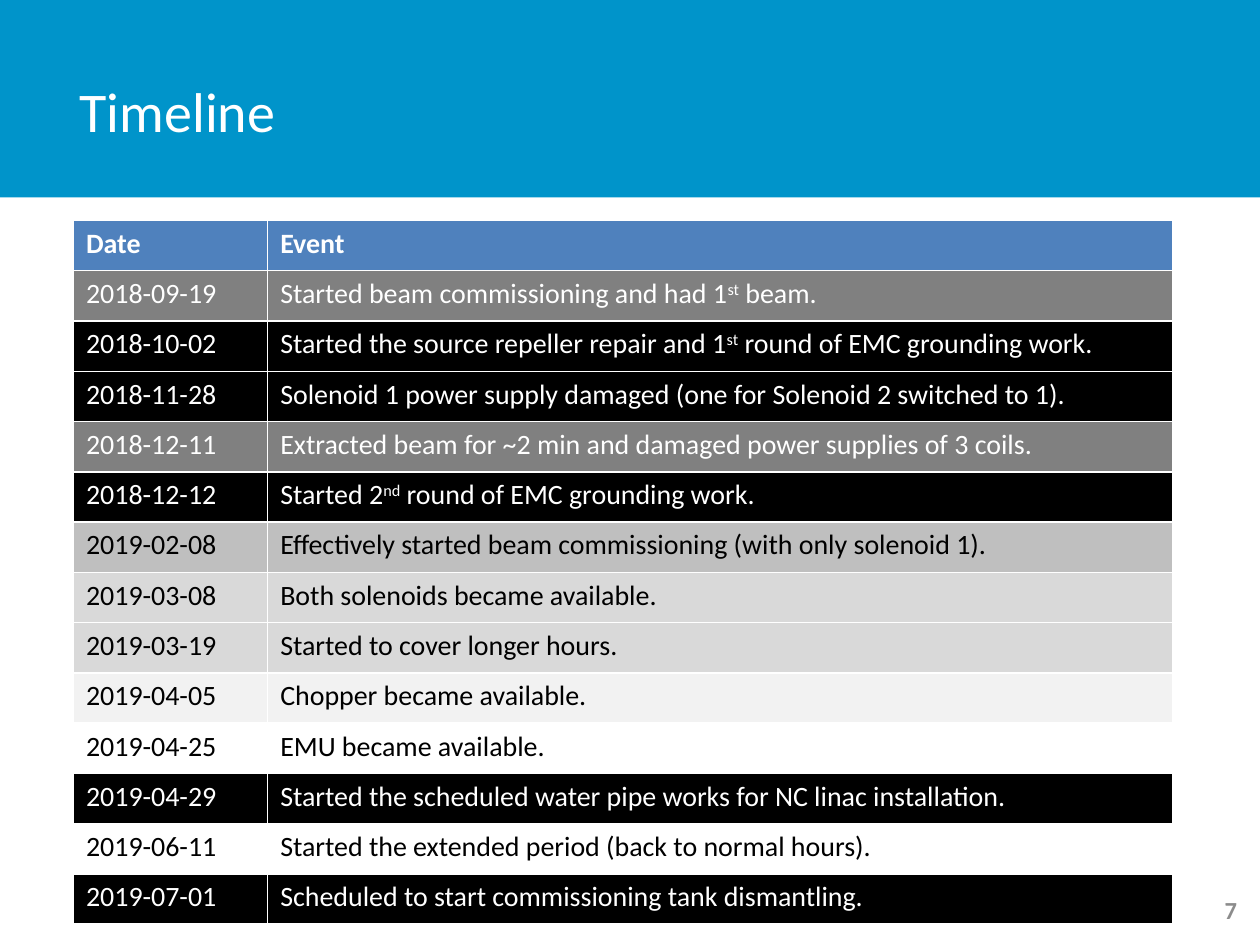
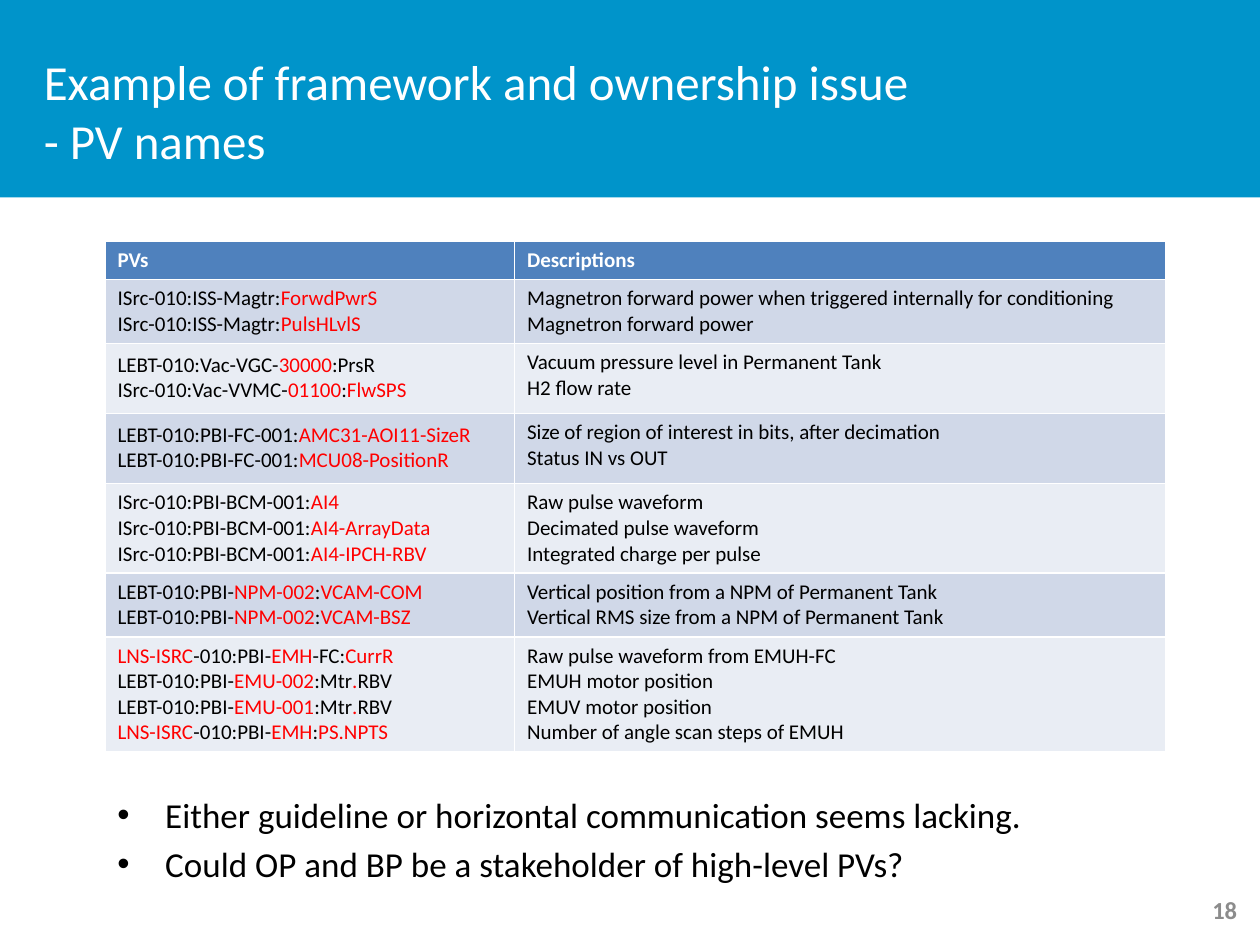
from lxml import etree
from pptx import Presentation
from pptx import util as u
from pptx.dml.color import RGBColor
from pptx.enum import shapes, text
from pptx.oxml.ns import qn

CELL = u.Inches(1) / 12  # the grid has 120 columns and 90 rows
FONT = "Calibri"
COLORS = {
    "band": "0094CA", "header": "4F81BD", "page": "8C8C8C", "red": "FF0000",
    "white": "FFFFFF", "black": "000000", "odd": "D0D8E8", "even": "E9EDF4",
    "off": "000000", "short": "808080", "part": "BFBFBF", "day": "D9D9D9",
    "long": "F2F2F2", "full": "FFFFFF",
}
MARK = "|"  # encloses accented text

EVENTS = [
    ("2018-09-19", "Started beam commissioning and had 1|st| beam.", "short"),
    ("2018-10-02", "Started the source repeller repair and 1|st| round of EMC grounding work.", "off"),
    ("2018-11-28", "Solenoid 1 power supply damaged (one for Solenoid 2 switched to 1).", "off"),
    ("2018-12-11", "Extracted beam for ~2 min and damaged power supplies of 3 coils.", "short"),
    ("2018-12-12", "Started 2|nd| round of EMC grounding work.", "off"),
    ("2019-02-08", "Effectively started beam commissioning (with only solenoid 1).", "part"),
    ("2019-03-08", "Both solenoids became available.", "day"),
    ("2019-03-19", "Started to cover longer hours.", "day"),
    ("2019-04-05", "Chopper became available.", "long"),
    ("2019-04-25", "EMU became available.", "full"),
    ("2019-04-29", "Started the scheduled water pipe works for NC linac installation.", "off"),
    ("2019-06-11", "Started the extended period (back to normal hours).", "full"),
    ("2019-07-01", "Scheduled to start commissioning tank dismantling.", "off"),
]

PV_GROUPS = [
    [("ISrc-010:ISS-Magtr:|ForwdPwrS|",
      "Magnetron forward power when triggered internally for conditioning"),
     ("ISrc-010:ISS-Magtr:|PulsHLvlS|", "Magnetron forward power")],
    [("LEBT-010:Vac-VGC-|30000|:PrsR", "Vacuum pressure level in Permanent Tank"),
     ("ISrc-010:Vac-VVMC-|01100|:|FlwSPS|", "H2 flow rate")],
    [("LEBT-010:PBI-FC-001:|AMC31-AOI11-SizeR|",
      "Size of region of interest in bits, after decimation"),
     ("LEBT-010:PBI-FC-001:|MCU08-PositionR|", "Status IN vs OUT")],
    [("ISrc-010:PBI-BCM-001:|AI4|", "Raw pulse waveform"),
     ("ISrc-010:PBI-BCM-001:|AI4-ArrayData|", "Decimated pulse waveform"),
     ("ISrc-010:PBI-BCM-001:|AI4-IPCH-RBV|", "Integrated charge per pulse")],
    [("LEBT-010:PBI-|NPM-002|:|VCAM-COM|", "Vertical position from a NPM of Permanent Tank"),
     ("LEBT-010:PBI-|NPM-002|:|VCAM-BSZ|", "Vertical RMS size from a NPM of Permanent Tank")],
    [("|LNS-ISRC|-010:PBI-|EMH|-FC:|CurrR|", "Raw pulse waveform from EMUH-FC"),
     ("LEBT-010:PBI-|EMU-002|:Mtr|.|RBV", "EMUH motor position"),
     ("LEBT-010:PBI-|EMU-001|:Mtr|.|RBV", "EMUV motor position"),
     ("|LNS-ISRC|-010:PBI-|EMH|:|PS.NPTS|", "Number of angle scan steps of EMUH")],
]
PADDED_GROUPS = (1, 2)


def grid(*counts):
    return [u.Emu(round(count * CELL)) for count in counts]


def rgb(name):
    return RGBColor.from_string(COLORS[name])


def redden(run):
    run.font.color.rgb = rgb("red")


def raise_up(run):
    run._r.get_or_add_rPr().set("baseline", "30000")


class Deck:
    def __init__(self):
        self.show = Presentation()
        self.show.slide_width, self.show.slide_height = grid(120, 90)
        self.slide = None

    def new_slide(self, title, number, left, width, size):
        self.slide = self.show.slides.add_slide(self.show.slide_layouts[6])
        band = self.slide.shapes.add_shape(
            shapes.MSO_SHAPE.RECTANGLE, *grid(0, 0, 120, 18.8))
        band.shadow.inherit = False
        band.fill.solid()
        band.fill.fore_color.rgb = rgb("band")
        band.line.fill.background()
        self.text_box((left, 3, width, 15), [title], size, "white", middle=True)
        page = self.text_box((91, 84.2, 28, 4.8), [str(number)], 14, "page",
                             bold=True, middle=True)
        page.paragraphs[0].alignment = text.PP_ALIGN.RIGHT

    def set_lines(self, frame, lines, size, color, bold=False, accent=None, bullet=False):
        """Fill a frame, one paragraph a line; accent styles the marked runs."""
        for i, line in enumerate(lines):
            paragraph = frame.paragraphs[0] if i == 0 else frame.add_paragraph()
            if bullet:
                self.add_bullet(paragraph, 0 if i == 0 else size * 0.2)
            font = paragraph.font
            font.name, font.size, font.bold = FONT, u.Pt(size), bold
            font.color.rgb = rgb(color)
            plain, *rest = line.split(MARK)
            if plain:
                paragraph.text = plain
            for j, part in enumerate(rest):
                if part:
                    run = paragraph.add_run()
                    run.text = part
                    if j % 2 == 0:
                        accent(run)

    def add_bullet(self, paragraph, space):
        paragraph.space_before = u.Pt(space)
        properties = paragraph._p.get_or_add_pPr()
        indent = u.Inches(0.38)
        properties.set("marL", str(indent))
        properties.set("indent", str(-indent))
        etree.SubElement(properties, qn("a:buFont")).set("typeface", "Arial")
        etree.SubElement(properties, qn("a:buChar")).set("char", "•")

    def text_box(self, place, lines, size, color, middle=False, **style):
        frame = self.slide.shapes.add_textbox(*grid(*place)).text_frame
        frame.word_wrap = True
        frame.vertical_anchor = text.MSO_ANCHOR.MIDDLE if middle else text.MSO_ANCHOR.TOP
        self.set_lines(frame, lines, size, color, **style)
        return frame

    def table(self, left, top, widths, heights, headings, size):
        table = self.slide.shapes.add_table(
            len(heights), len(widths),
            *grid(left, top, sum(widths), sum(heights))).table
        for column, width in zip(table.columns, grid(*widths)):
            column.width = width
        for row, height in zip(table.rows, grid(*heights)):
            row.height = height
        for cell, heading in zip(table.rows[0].cells, headings):
            self.cell(cell, [heading], size, "white", "header", bold=True)
        return table

    def cell(self, cell, lines, size, color, fill, **style):
        cell.fill.solid()
        cell.fill.fore_color.rgb = rgb(fill)
        self.set_lines(cell.text_frame, lines, size, color, **style)


def timeline(deck):
    deck.new_slide("Timeline", 7, left=6.4, width=93.7, size=32)
    table = deck.table(7, 21, (18.5, 86.2), [4.79] * (len(EVENTS) + 1),
                       ("Date", "Event"), 16)
    for row, (date, event, state) in enumerate(EVENTS, 1):
        color = "white" if state in ("off", "short") else "black"
        for column, content in enumerate((date, event)):
            deck.cell(table.cell(row, column), [content], 16, color, state,
                      accent=raise_up)


def pv_names(deck):
    deck.new_slide("Example of framework and ownership issue\v- PV names", 18,
                   left=3, width=97, size=28)
    line, margins, padding = 2.44, 1.2, 0.6
    heights = [line + margins] + [
        len(group) * line + margins + (padding if i in PADDED_GROUPS else 0)
        for i, group in enumerate(PV_GROUPS)]
    table = deck.table(10, 23, (39, 62), heights, ("PVs", "Descriptions"), 12)
    for i, group in enumerate(PV_GROUPS):
        for column, lines in enumerate(zip(*group)):
            deck.cell(table.cell(i + 1, column), lines, 12, "black",
                      "even" if i % 2 else "odd", accent=redden)
        if i in PADDED_GROUPS:
            names = table.cell(i + 1, 0)
            names.margin_top = names.margin_bottom = u.Inches(0.07)
    deck.text_box((10, 75, 103, 11.2), [
        "Either guideline or horizontal communication seems lacking.",
        "Could OP and BP be a stakeholder of high-level PVs?",
    ], 20, "black", bullet=True)


def main():
    deck = Deck()
    timeline(deck)
    pv_names(deck)
    deck.show.save("out.pptx")


if __name__ == "__main__":
    main()
